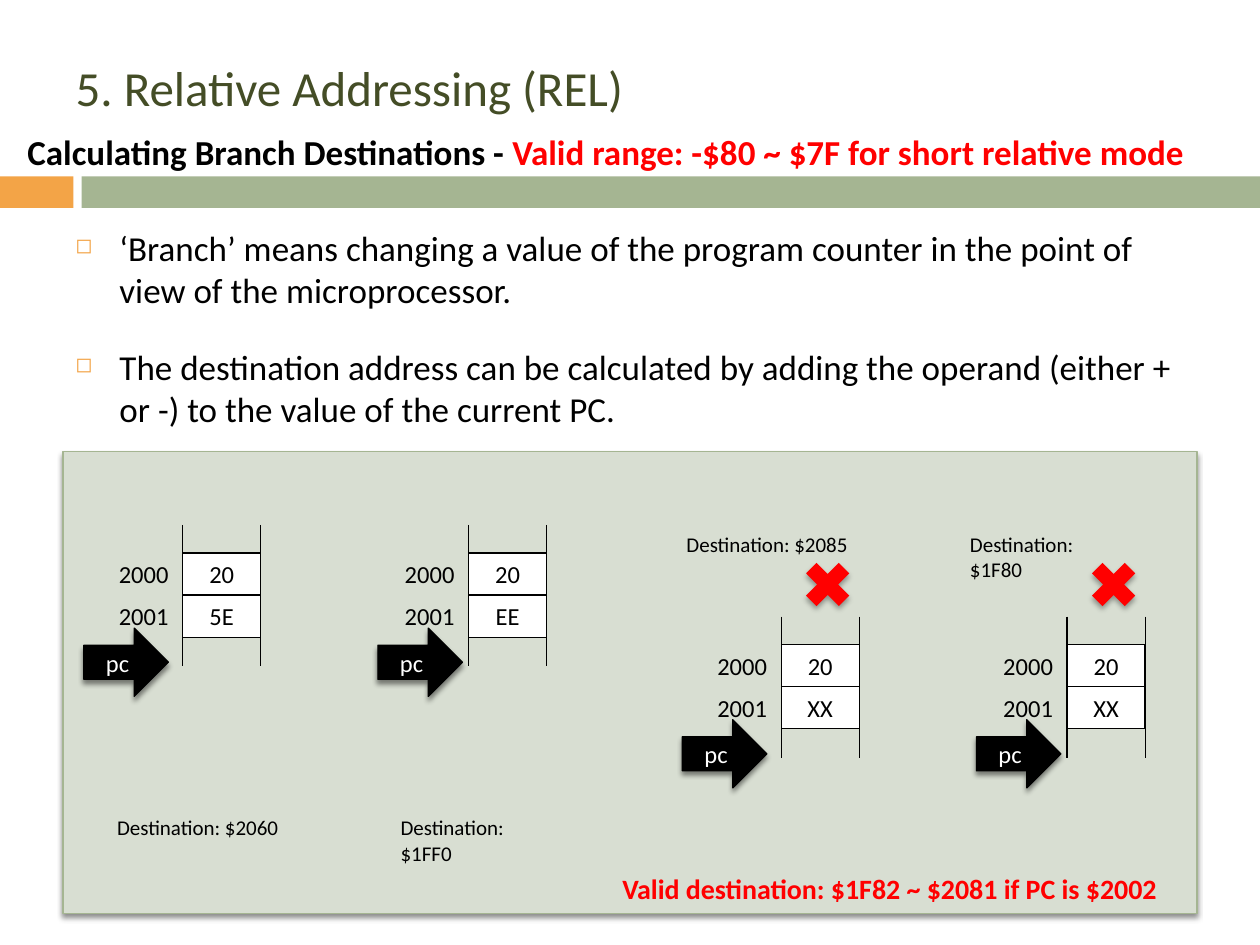
from lxml import etree
from pptx import Presentation
from pptx.dml.color import RGBColor
from pptx.enum import shapes, text
from pptx.oxml import ns
from pptx.util import Pt

COLORS = {
    "black": "000000", "white": "FFFFFF", "red": "FF0000", "title": "444D26",
    "orange": "F3A447", "green": "A5B592", "panel": "D8DED2",
}
FONT = "Calibri"
CELL_WIDTH, CELL_HEIGHT = 44.6, 24.1
BULLETS = [
    "‘Branch’ means changing a value of the program counter in the point of view of the microprocessor.",
    "The destination address can be calculated by adding the operand (either + or -) to the value of the current PC.",
]
MEMORIES = [
    (104.4, 316, "5E", 48),
    (267.8, 316, "EE", 216),
    (446.4, 368.3, "XX", 390),
    (609.8, 368.3, "XX", 558),
]
DESTINATIONS = [
    (59.8, 462.2, 108, "$2060"),
    (221.8, 462.2, 103.7, "$1FF0"),
    (385.2, 300.2, 108, "$2085"),
    (547.2, 300.2, 105.1, "$1F80"),
]


def rgb(name):
    return RGBColor.from_string(COLORS[name])


def box(left, top, width, height):
    return Pt(left), Pt(top), Pt(width), Pt(height)


def format_run(run, size, color="black", bold=False):
    run.font.name = FONT
    run.font.size = Pt(size)
    run.font.bold = bold
    run.font.color.rgb = rgb(color)


def write(shape, words, size, color="black", bold=False, centered=False,
          anchor=text.MSO_ANCHOR.TOP):
    frame = shape.text_frame
    frame.word_wrap = True
    frame.vertical_anchor = anchor
    frame.text = words
    for paragraph in frame.paragraphs:
        paragraph.alignment = text.PP_ALIGN.CENTER if centered else text.PP_ALIGN.LEFT
        for run in paragraph.runs:
            format_run(run, size, color, bold)
    return frame


def add_text(slide, bounds, words, size, **style):
    shape = slide.shapes.add_textbox(*box(*bounds))
    return write(shape, words, size, **style)


def add_figure(slide, kind, bounds, fill, line=None, weight=0.75):
    shape = slide.shapes.add_shape(kind, *box(*bounds))
    shape.shadow.inherit = False
    shape.fill.solid()
    shape.fill.fore_color.rgb = rgb(fill)
    if line:
        shape.line.color.rgb = rgb(line)
        shape.line.width = Pt(weight)
    else:
        shape.line.fill.background()
    return shape


def add_shadow(shape, distance, opacity):
    effects = shape.element.spPr.find(ns.qn("a:effectLst"))
    shadow = etree.SubElement(
        effects, ns.qn("a:outerShdw"), blurRad=str(Pt(3)), dist=str(Pt(distance)),
        dir="5400000", rotWithShape="0")
    color = etree.SubElement(shadow, ns.qn("a:srgbClr"), val=COLORS["black"])
    etree.SubElement(color, ns.qn("a:alpha"), val=str(opacity * 1000))


def add_line(slide, x, top, bottom):
    line = slide.shapes.add_connector(
        shapes.MSO_CONNECTOR.STRAIGHT, Pt(x), Pt(top), Pt(x), Pt(bottom))
    line.line.color.rgb = rgb("black")
    line.line.width = Pt(0.75)
    etree.SubElement(line.element.spPr, ns.qn("a:effectLst"))


def add_bullets(slide):
    frame = add_text(slide, (36, 126, 648, 131.8), "\n".join(BULLETS), 20)
    for paragraph in frame.paragraphs:
        paragraph.space_before = Pt(20)
        properties = paragraph._p.get_or_add_pPr()
        properties.set("marL", str(Pt(25.2)))
        properties.set("indent", str(Pt(-25.2)))
        color = etree.SubElement(properties, ns.qn("a:buClr"))
        etree.SubElement(color, ns.qn("a:srgbClr"), val=COLORS["orange"])
        etree.SubElement(properties, ns.qn("a:buSzPct"), val="60000")
        etree.SubElement(properties, ns.qn("a:buChar"), char="◻")


def add_title(slide):
    title = slide.shapes.title
    title.left, title.top, title.width, title.height = box(36, 21.6, 648, 56.2)
    write(title, "5. Relative Addressing (REL)", 28, "title",
          anchor=text.MSO_ANCHOR.MIDDLE)


def add_subtitle(slide):
    frame = add_text(slide, (8.6, 71.3, 702.7, 30.2),
                     "Calculating Branch Destinations - ", 20, bold=True,
                     anchor=text.MSO_ANCHOR.MIDDLE)
    run = frame.paragraphs[0].add_run()
    run.text = "Valid range: -$80 ~ $7F for short relative mode"
    format_run(run, 20, "red", True)


def add_memory(slide, left, top, operand):
    for row, (address, value) in enumerate([("2000", "20"), ("2001", operand)]):
        y = top + row * CELL_HEIGHT
        cell = add_figure(slide, shapes.MSO_SHAPE.RECTANGLE,
                          (left, y, CELL_WIDTH, CELL_HEIGHT), "white", "black")
        write(cell, value, 14, centered=True)
        add_text(slide, (left - CELL_WIDTH, y, CELL_WIDTH, CELL_HEIGHT),
                 address, 14, centered=True)
    for x in (left, left + CELL_WIDTH):
        add_line(slide, x, top - 16, top + 64.6)


def add_counter(slide, left, top):
    arrow = add_figure(slide, shapes.MSO_SHAPE.RIGHT_ARROW,
                       (left, top, 48.2, 38.9), "black", "black", 0.79)
    add_shadow(arrow, 2.4, 45)
    write(arrow, "pc", 14, "white", centered=True, anchor=text.MSO_ANCHOR.MIDDLE)


def add_cross(slide, left, top):
    cross = add_figure(slide, shapes.MSO_SHAPE.MATH_MULTIPLY, (left, top, 36, 36), "red")
    add_shadow(cross, 2, 35)


def main():
    presentation = Presentation()
    presentation.slide_width, presentation.slide_height = Pt(720), Pt(540)
    slide = presentation.slides.add_slide(presentation.slide_layouts[5])
    rectangle = shapes.MSO_SHAPE.RECTANGLE
    add_figure(slide, rectangle, (0, 100.8, 42, 18), "orange")
    add_figure(slide, rectangle, (46.6, 100.8, 673.4, 18), "green")
    panel = add_figure(slide, rectangle, (36, 258, 648, 264), "panel", "green", 0.79)
    add_shadow(panel, 2.4, 45)
    add_title(slide)
    add_subtitle(slide)
    add_bullets(slide)
    for left, top, operand, counter_left in MEMORIES:
        add_memory(slide, left, top, operand)
        add_counter(slide, counter_left, top + 43)
        if operand == "XX":
            add_cross(slide, left + 8.6, 316)
    for left, top, width, address in DESTINATIONS:
        add_text(slide, (left, top, width, 21.6), f"Destination: {address}", 12)
    add_text(slide, (348.5, 494.6, 342, 26.6),
             "Valid destination: $1F82 ~ $2081 if PC is $2002", 16,
             color="red", bold=True)
    presentation.save("out.pptx")


if __name__ == "__main__":
    main()
